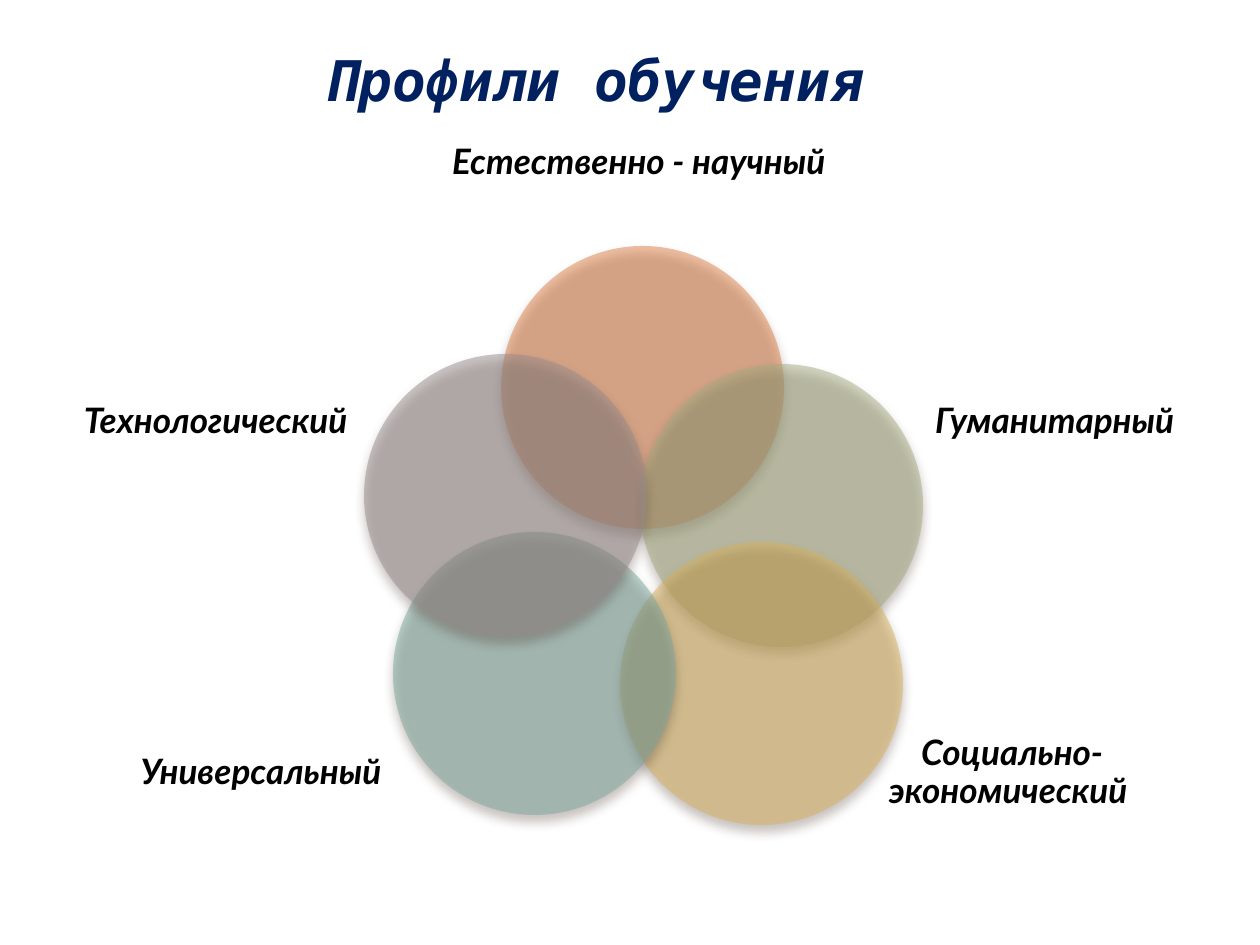
"""Build a slide of five overlapping study profiles."""
import dataclasses

import lxml.etree
import pptx
import pptx.dml.color
import pptx.enum.shapes
import pptx.enum.text
import pptx.oxml.ns
import pptx.util

PX = 914400 / 126
CIRCLE_SIZE = 283

PROFILES = [
    ("Естественно - научный", "DD8047", (501, 246), (426, 68, 426, 190)),
    ("Гуманитарный ", "A5AB81", (640, 364), (911, 319, 295, 207)),
    ("Социально-экономический ", "D8B25C", (620, 542), (820, 670, 384, 207)),
    ("Универсальный ", "7BA79D", (393, 532), (89, 670, 352, 207)),
    ("Технологический ", "968C8C", (364, 354), (45, 319, 349, 207)),
]


@dataclasses.dataclass(frozen=True)
class Theme:
    """Colours, fonts and type sizes of the slide."""

    title_color: str = "002060"
    label_color: str = "000000"
    shadow_color: str = "4E3B30"
    title_font: str = "DejaVu Sans Mono"
    label_font: str = "Lato"
    title_size: int = 32
    label_size: int = 20
    circle_alpha: int = 50
    shadow_alpha: int = 60


def emu(*lengths):
    """Turn px lengths into EMU."""
    return [pptx.util.Emu(round(length * PX)) for length in lengths]


def add_node(parent, name, **attributes):
    """Append a DrawingML element to its parent."""
    node = lxml.etree.SubElement(parent, pptx.oxml.ns.qn(f"a:{name}"))
    for key, value in attributes.items():
        node.set(key, str(value))
    return node


class ProfileSlide:
    """Hold the theme and the current slide, and draw its elements."""

    def __init__(self, page, theme):
        """Keep the page and the theme."""
        self.page = page
        self.theme = theme

    def fill_text(self, box, text, font, size, color):
        """Fill a box with one centred bold italic paragraph."""
        frame = box.text_frame
        frame.text = text
        frame.word_wrap = True
        frame.vertical_anchor = pptx.enum.text.MSO_ANCHOR.MIDDLE
        para = frame.paragraphs[0]
        para.alignment = pptx.enum.text.PP_ALIGN.CENTER
        for span in para.runs:
            span.font.name = font
            span.font.size = pptx.util.Pt(size)
            span.font.bold = span.font.italic = True
            span.font.color.rgb = pptx.dml.color.RGBColor.from_string(color)
        return para

    def title(self, text, bounds):
        """Move and format the title placeholder."""
        box = self.page.shapes.title
        box.left, box.top, box.width, box.height = emu(*bounds)
        self.fill_text(box, text, self.theme.title_font, self.theme.title_size,
                       self.theme.title_color)
        box.text_frame.auto_size = pptx.enum.text.MSO_AUTO_SIZE.SHAPE_TO_FIT_TEXT

    def label(self, text, bounds):
        """Add a profile name without insets."""
        box = self.page.shapes.add_textbox(*emu(*bounds))
        para = self.fill_text(box, text, self.theme.label_font,
                              self.theme.label_size, self.theme.label_color)
        para.line_spacing = 0.9
        frame = box.text_frame
        frame.margin_left = frame.margin_right = 0
        frame.margin_top = frame.margin_bottom = 0

    def circle(self, color, corner):
        """Add a translucent circle with a soft shadow."""
        circle = self.page.shapes.add_shape(
            pptx.enum.shapes.MSO_SHAPE.OVAL,
            *emu(*corner, CIRCLE_SIZE, CIRCLE_SIZE))
        circle.fill.solid()
        circle.fill.fore_color.rgb = pptx.dml.color.RGBColor.from_string(color)
        circle.line.fill.background()
        circle.shadow.inherit = False
        properties = circle.element.spPr
        fill = properties.find(".//" + pptx.oxml.ns.qn("a:srgbClr"))
        add_node(fill, "alpha", val=self.theme.circle_alpha * 1000)
        effects = properties.find(pptx.oxml.ns.qn("a:effectLst"))
        shadow = add_node(effects, "outerShdw", blurRad=int(pptx.util.Pt(6)),
                          dist=int(pptx.util.Pt(4)), dir=90 * 60000,
                          rotWithShape=0)
        shade = add_node(shadow, "srgbClr", val=self.theme.shadow_color)
        add_node(shade, "alpha", val=self.theme.shadow_alpha * 1000)


def main():
    """Build and save the deck."""
    deck = pptx.Presentation()
    deck.slide_width, deck.slide_height = emu(1260, 945)
    page = deck.slides.add_slide(deck.slide_layouts[5])
    slide = ProfileSlide(page, Theme())
    slide.title("Профили обучения ", (178, 39, 867, 81))
    for name, color, corner, bounds in PROFILES:
        slide.circle(color, corner)
        slide.label(name, bounds)
    deck.save("out.pptx")


if __name__ == "__main__":
    main()
